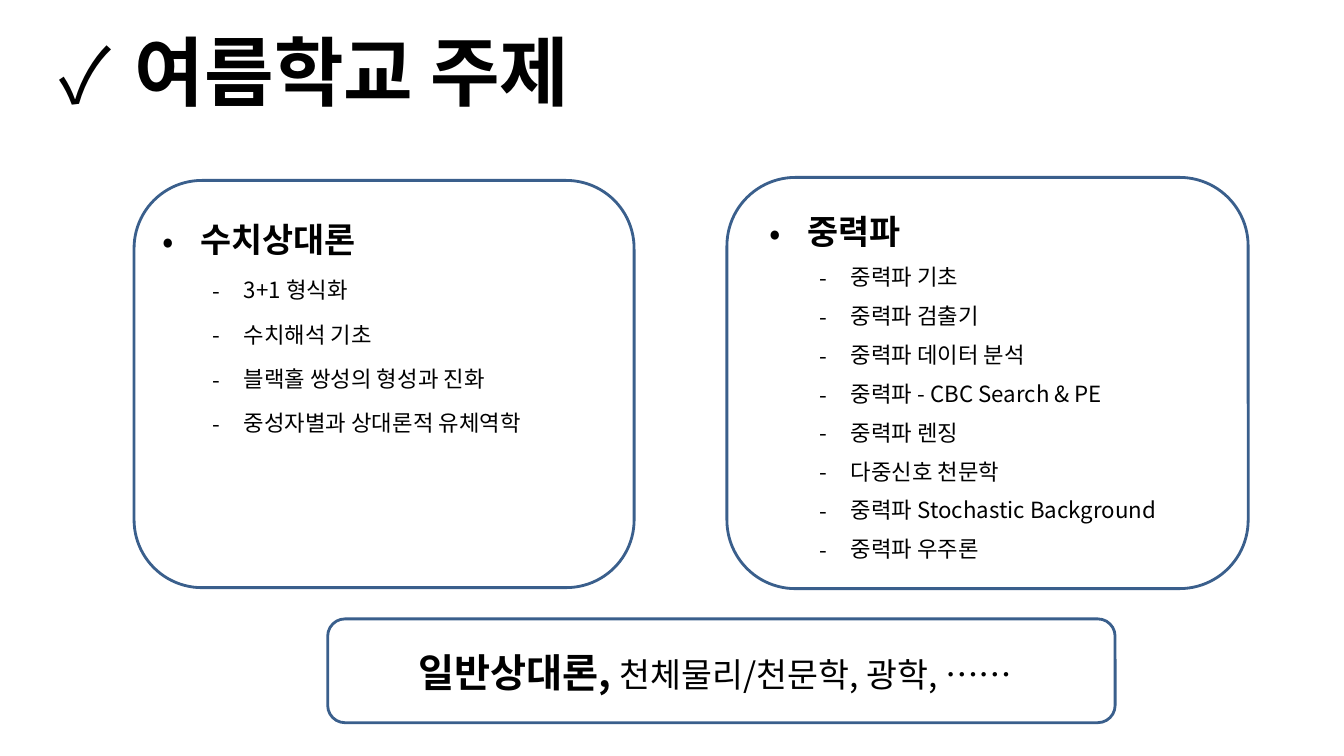
from dataclasses import dataclass
from typing import Optional

from lxml.etree import SubElement
from pptx import Presentation
from pptx.dml.color import RGBColor
from pptx.enum.shapes import MSO_SHAPE as Preset
from pptx.enum.text import MSO_ANCHOR as Anchor, PP_ALIGN as Align
from pptx.oxml.ns import qn
from pptx.slide import Slide
from pptx.text.text import TextFrame, _Paragraph as Paragraph
from pptx.util import Inches, Pt


@dataclass(frozen=True)
class Theme:
    font: str = "Noto Sans CJK KR"
    ink: RGBColor = RGBColor(0, 0, 0)
    outline: RGBColor = RGBColor(0x3A, 0x5F, 0x8C)
    outline_width: float = 2
    title: float = 54
    heading: float = 24.1
    item: float = 15.9
    footer_lead: float = 28
    footer_rest: float = 24


@dataclass(frozen=True)
class Box:
    left: float
    top: float
    width: float
    height: float

    def lengths(self) -> list[int]:
        return [Inches(v) for v in (self.left, self.top, self.width, self.height)]


@dataclass(frozen=True)
class Bullet:
    char: str
    margin: float
    hang: float


@dataclass(frozen=True)
class Topic:
    heading: str
    items: tuple[str, ...]
    text_box: Box
    frame: Box
    line_spacing: float


THEME = Theme()
TITLE_BULLET = Bullet("✓", 0.75, 0.75)
HEADING_BULLET = Bullet("•", 0.38, 0.38)
ITEM_BULLET = Bullet("-", 0.81, 0.31)

TOPICS = (
    Topic(
        "수치상대론",
        ("3+1 형식화", "수치해석 기초", "블랙홀 쌍성의 형성과 진화",
         "중성자별과 상대론적 유체역학"),
        Box(1.51, 1.92, 4.31, 3.67), Box(1.33, 1.79, 4.96, 4.04), 1.5,
    ),
    Topic(
        "중력파",
        ("중력파 기초", "중력파 검출기", "중력파 데이터 분석",
         "중력파 - CBC Search & PE", "중력파 렌징", "다중신호 천문학",
         "중력파 Stochastic Background", "중력파 우주론"),
        Box(7.53, 1.92, 4.31, 3.89), Box(7.21, 1.76, 5.17, 4.08), 1.3,
    ),
)


def add_text_frame(slide: Slide, box: Box, anchor: Anchor = Anchor.TOP) -> TextFrame:
    frame = slide.shapes.add_textbox(*box.lengths()).text_frame
    frame.word_wrap = True
    frame.vertical_anchor = anchor
    return frame


def write(paragraph: Paragraph, text: str, *, size: float, bold: bool = False,
          bullet: Optional[Bullet] = None, line_spacing: Optional[float] = None,
          space_before: float = 0, align: Align = Align.LEFT) -> None:
    """Append a formatted run and set its paragraph's layout."""
    run = paragraph.add_run()
    run.text = text
    run.font.name = THEME.font
    run.font.size = Pt(size)
    run.font.bold = bold
    run.font.color.rgb = THEME.ink
    SubElement(run.font._element, qn("a:ea"), typeface=THEME.font)

    paragraph.alignment = align
    paragraph.space_before = Pt(space_before)
    if line_spacing:
        paragraph.line_spacing = line_spacing
    if bullet:
        run.font._element.set("kern", "1200")
        properties = paragraph._p.get_or_add_pPr()
        properties.set("marL", str(Inches(bullet.margin)))
        properties.set("indent", str(-Inches(bullet.hang)))
        SubElement(properties, qn("a:buFont"), typeface=THEME.font)
        SubElement(properties, qn("a:buChar"), char=bullet.char)


def add_rounded_frame(slide: Slide, box: Box) -> None:
    frame = slide.shapes.add_shape(Preset.ROUNDED_RECTANGLE, *box.lengths())
    frame.shadow.inherit = False
    frame.fill.background()
    frame.line.color.rgb = THEME.outline
    frame.line.width = Pt(THEME.outline_width)


def add_topic(slide: Slide, topic: Topic) -> None:
    text = add_text_frame(slide, topic.text_box)
    write(text.paragraphs[0], topic.heading, size=THEME.heading, bold=True,
          bullet=HEADING_BULLET, line_spacing=topic.line_spacing)
    for item in topic.items:
        write(text.add_paragraph(), item, size=THEME.item, bullet=ITEM_BULLET,
              line_spacing=topic.line_spacing, space_before=3)
    add_rounded_frame(slide, topic.frame)


def add_footer(slide: Slide) -> None:
    line = add_text_frame(slide, Box(3.07, 6.19, 8.05, 0.72), Anchor.MIDDLE).paragraphs[0]
    write(line, "일반상대론, ", size=THEME.footer_lead, bold=True,
          line_spacing=1.5, align=Align.CENTER)
    write(line, "천체물리/천문학, 광학, ……", size=THEME.footer_rest,
          line_spacing=1.5, align=Align.CENTER)
    add_rounded_frame(slide, Box(3.25, 6.14, 7.81, 1.03))


def main() -> None:
    deck = Presentation()
    deck.slide_width, deck.slide_height = Inches(13.33), Inches(7.5)
    slide = deck.slides.add_slide(deck.slide_layouts[6])

    # Title
    title = add_text_frame(slide, Box(0.49, 0.28, 6.61, 0.84), Anchor.MIDDLE)
    write(title.paragraphs[0], "여름학교 주제", size=THEME.title, bold=True,
          bullet=TITLE_BULLET)

    # Two topic lists
    for topic in TOPICS:
        add_topic(slide, topic)

    # Background subjects
    add_footer(slide)
    deck.save("out.pptx")


if __name__ == "__main__":
    main()
